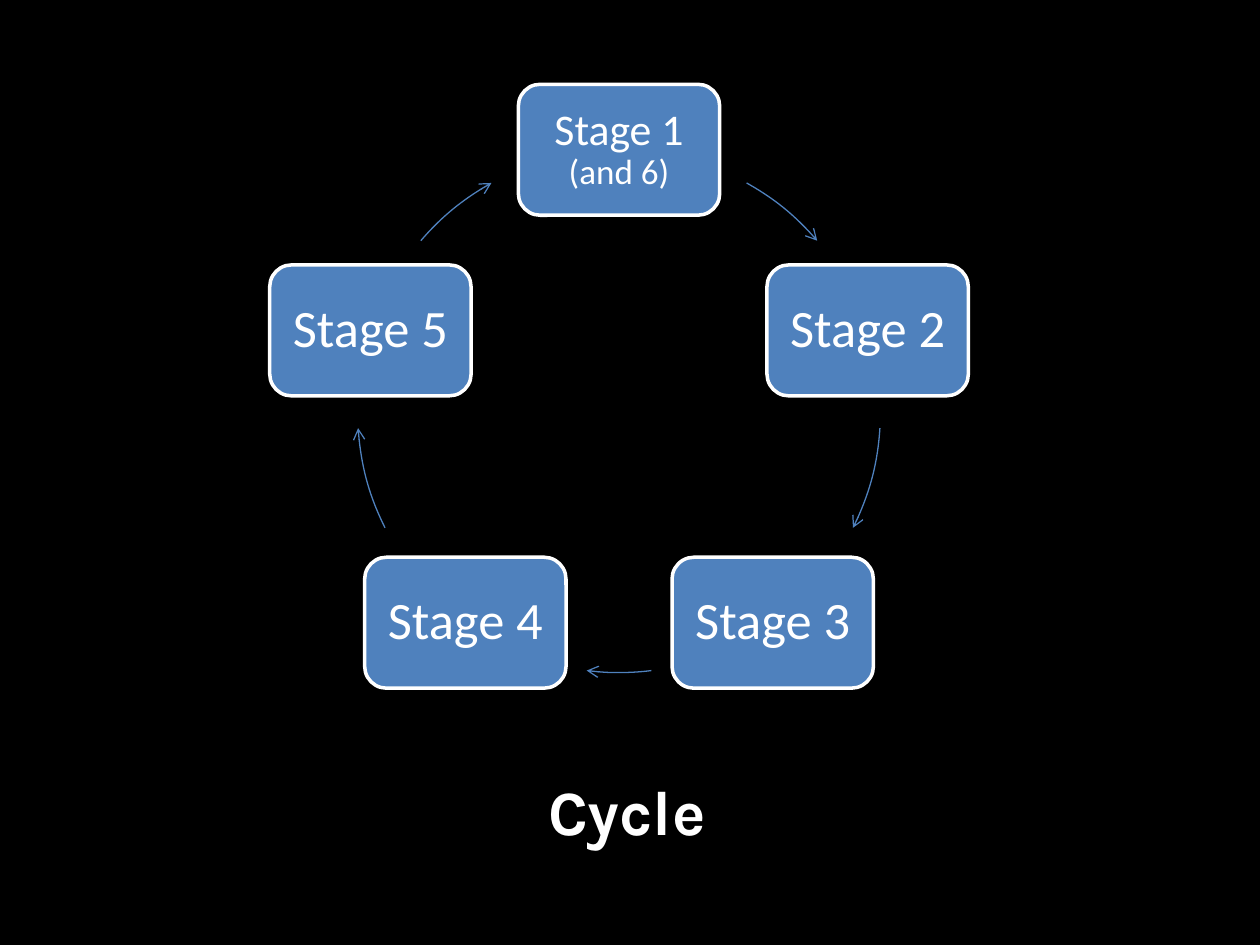
from math import cos, radians, sin

from lxml.etree import SubElement
from pptx import Presentation
from pptx.dml.color import RGBColor
from pptx.enum.shapes import MSO_SHAPE
from pptx.enum.text import MSO_ANCHOR, PP_ALIGN
from pptx.oxml.ns import qn
from pptx.util import Cm, Pt

BLACK = RGBColor(0x00, 0x00, 0x00)
WHITE = RGBColor(0xFF, 0xFF, 0xFF)
BLUE = RGBColor(0x4F, 0x81, 0xBD)

MID_X, MID_Y, RADIUS = 12.48, 8.29, 5.27
BOX_W, BOX_H = 4.06, 2.64

STAGES = [
    [("Stage 1 ", 25), ("(and 6)", 20)],
    [("Stage 2", 30)],
    [("Stage 3", 30)],
    [("Stage 4", 30)],
    [("Stage 5", 30)],
]
ARCS = [(299.2, 319.3), (3.7, 26.5), (82.9, 97.1), (153.5, 176.3), (220.7, 240.8)]


def add_stage(slide, turn, runs):
    """Add a rounded box centred on the ring at the given angle."""
    left = MID_X + RADIUS * cos(radians(turn)) - BOX_W / 2
    top = MID_Y + RADIUS * sin(radians(turn)) - BOX_H / 2
    box = slide.shapes.add_shape(
        MSO_SHAPE.ROUNDED_RECTANGLE, Cm(left), Cm(top), Cm(BOX_W), Cm(BOX_H)
    )
    box.shadow.inherit = False
    box.fill.solid()
    box.fill.fore_color.rgb = BLUE
    box.line.color.rgb = WHITE
    box.line.width = Pt(2)
    frame = box.text_frame
    frame.word_wrap = True
    frame.vertical_anchor = MSO_ANCHOR.MIDDLE
    frame.margin_left = frame.margin_right = Cm(0.25)
    frame.margin_top = frame.margin_bottom = Cm(0.25)
    para = frame.paragraphs[0]
    para.alignment = PP_ALIGN.CENTER
    para.line_spacing = 0.9
    para.font.name = "Calibri"
    para.font.color.rgb = WHITE
    for text, size in runs:
        run = para.add_run()
        run.text = text
        run.font.size = Pt(size)


def add_arc(slide, start, end):
    """Add a clockwise arrow along the ring between two angles in degrees."""
    arc = slide.shapes.add_shape(
        MSO_SHAPE.ARC, Cm(MID_X - RADIUS), Cm(MID_Y - RADIUS),
        Cm(2 * RADIUS), Cm(2 * RADIUS),
    )
    arc.shadow.inherit = False
    arc.adjustments[0] = start * 0.6
    arc.adjustments[1] = end * 0.6
    arc.fill.background()
    arc.line.color.rgb = BLUE
    arc.line.width = Pt(0.75)
    line = arc.line._get_or_add_ln()
    SubElement(line, qn("a:tailEnd"), type="arrow")


def add_title(slide, text):
    """Add the bold title below the ring."""
    box = slide.shapes.add_textbox(Cm(10.8), Cm(15.44), Cm(4.01), Cm(1.8))
    box.text_frame.word_wrap = True
    para = box.text_frame.paragraphs[0]
    para.text = text
    para.font.name = "Karla"
    para.font.size = Pt(36)
    para.font.bold = True
    para.font.color.rgb = WHITE


def main():
    """Build the cycle slide and save it."""
    deck = Presentation()
    deck.slide_width, deck.slide_height = Cm(25.4), Cm(19.05)
    slide = deck.slides.add_slide(deck.slide_layouts[6])
    slide.background.fill.solid()
    slide.background.fill.fore_color.rgb = BLACK
    add_title(slide, "Cycle")
    for i, (runs, arc) in enumerate(zip(STAGES, ARCS)):
        add_stage(slide, 72 * i - 90, runs)
        add_arc(slide, *arc)
    deck.save("out.pptx")


if __name__ == "__main__":
    main()
